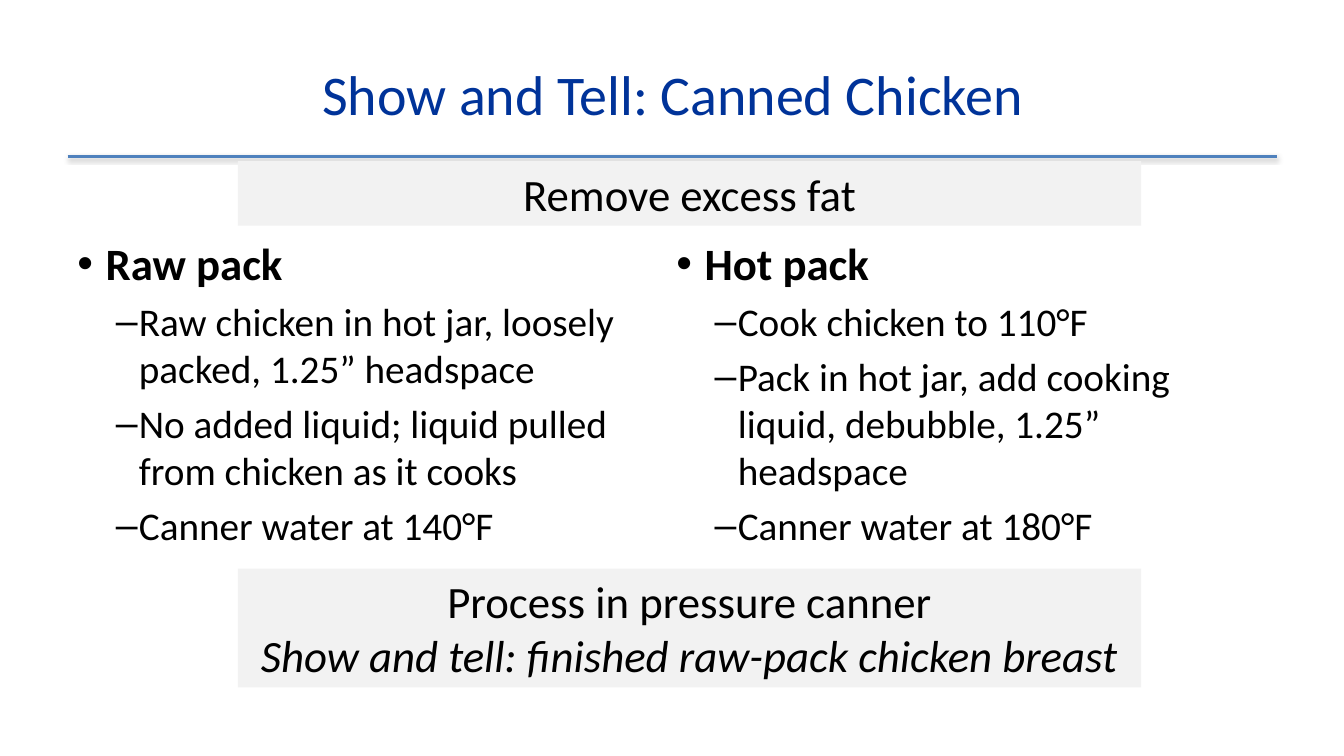
"""Build the canned chicken slide with two packing methods."""
from lxml.etree import SubElement
from pptx import Presentation
from pptx.dml.color import RGBColor
from pptx.enum.shapes import MSO_CONNECTOR as Link, MSO_SHAPE as Shape
from pptx.enum.text import MSO_ANCHOR as Anchor, PP_ALIGN as Align
from pptx.oxml import parse_xml
from pptx.oxml.ns import nsdecls, qn
from pptx.util import Inches, Pt

TITLE = "Show and Tell: Canned Chicken"
PACKS = [
    ((0.67, 2.29, 5.94, 3.89), "Raw pack", [
        "Raw chicken in hot jar, loosely packed, 1.25” headspace",
        "No added liquid; liquid pulled from chicken as it cooks",
        "Canner water at 140°F"]),
    ((6.61, 2.29, 6.06, 3.36), "Hot pack", [
        "Cook chicken to 110°F",
        "Pack in hot jar, add cooking liquid, debubble, 1.25” headspace",
        "Canner water at 180°F"]),
]
BANDS = [
    (1.6, 0.64, [("Remove excess fat", False)]),
    (5.64, 1.18, [("Process in pressure canner", False),
                  ("Show and tell: finished raw-pack chicken breast", True)]),
]
FONT = "Calibri"
NAVY = RGBColor(0x00, 0x33, 0x99)
BLUE = RGBColor(0x4F, 0x81, 0xBD)
BLACK = RGBColor(0x00, 0x00, 0x00)
GREY = RGBColor(0xF2, 0xF2, 0xF2)
SHADOW = f"""<a:effectLst {nsdecls("a")}>
<a:outerShdw blurRad="{Pt(3.1)}" dist="{Pt(1.6)}" dir="5400000" rotWithShape="0">
<a:srgbClr val="000000"><a:alpha val="38000"/></a:srgbClr>
</a:outerShdw></a:effectLst>"""


def add_para(frame, index, text, size, color=BLACK, bold=False, italic=False):
    para = frame.add_paragraph() if index else frame.paragraphs[0]
    run = para.add_run()
    run.text = text
    font = run.font
    font.name, font.size = FONT, Pt(size)
    font.bold, font.italic = bold, italic
    font.color.rgb = color
    return para


def add_bullet(para, mark, left, hang):
    props = para._p.get_or_add_pPr()
    props.set("marL", str(Inches(left)))
    props.set("indent", str(-Inches(hang)))
    SubElement(props, qn("a:buFont"), typeface="Arial")
    SubElement(props, qn("a:buChar"), char=mark)


def add_box(slide, place):
    frame = slide.shapes.add_textbox(*map(Inches, place)).text_frame
    frame.word_wrap = True
    return frame


def add_head(slide):
    frame = add_box(slide, (0.67, 0.3, 12, 1.25))
    frame.vertical_anchor = Anchor.MIDDLE
    add_para(frame, 0, TITLE, 40, NAVY).alignment = Align.CENTER
    ends = map(Inches, (0.67, 1.55, 12.67, 1.55))
    rule = slide.shapes.add_connector(Link.STRAIGHT, *ends)
    rule.line.color.rgb = BLUE
    rule.line.width = Pt(2)
    rule._element.spPr.append(parse_xml(SHADOW))


def add_pack(slide, place, name, steps):
    frame = add_box(slide, place)
    add_bullet(add_para(frame, 0, name, 32, bold=True), "•", 0.28, 0.28)
    for index, step in enumerate(steps, 1):
        para = add_para(frame, index, step, 28)
        para.level = 1
        add_bullet(para, "–", 0.61, 0.23)
        para.space_before = Pt(5.6)


def add_band(slide, top, height, lines):
    place = map(Inches, (2.36, top, 8.96, height))
    band = slide.shapes.add_shape(Shape.RECTANGLE, *place)
    band.shadow.inherit = False
    band.fill.solid()
    band.fill.fore_color.rgb = GREY
    band.line.fill.background()
    frame = band.text_frame
    frame.word_wrap = True
    frame.vertical_anchor = Anchor.TOP
    for index, (text, slant) in enumerate(lines):
        para = add_para(frame, index, text, 32, italic=slant)
        para.alignment = Align.CENTER


def main():
    deck = Presentation()
    deck.slide_width, deck.slide_height = Inches(13.33), Inches(7.5)
    slide = deck.slides.add_slide(deck.slide_layouts[6])
    add_head(slide)
    for pack in PACKS:
        add_pack(slide, *pack)
    for band in BANDS:
        add_band(slide, *band)
    deck.save("out.pptx")


if __name__ == "__main__":
    main()
